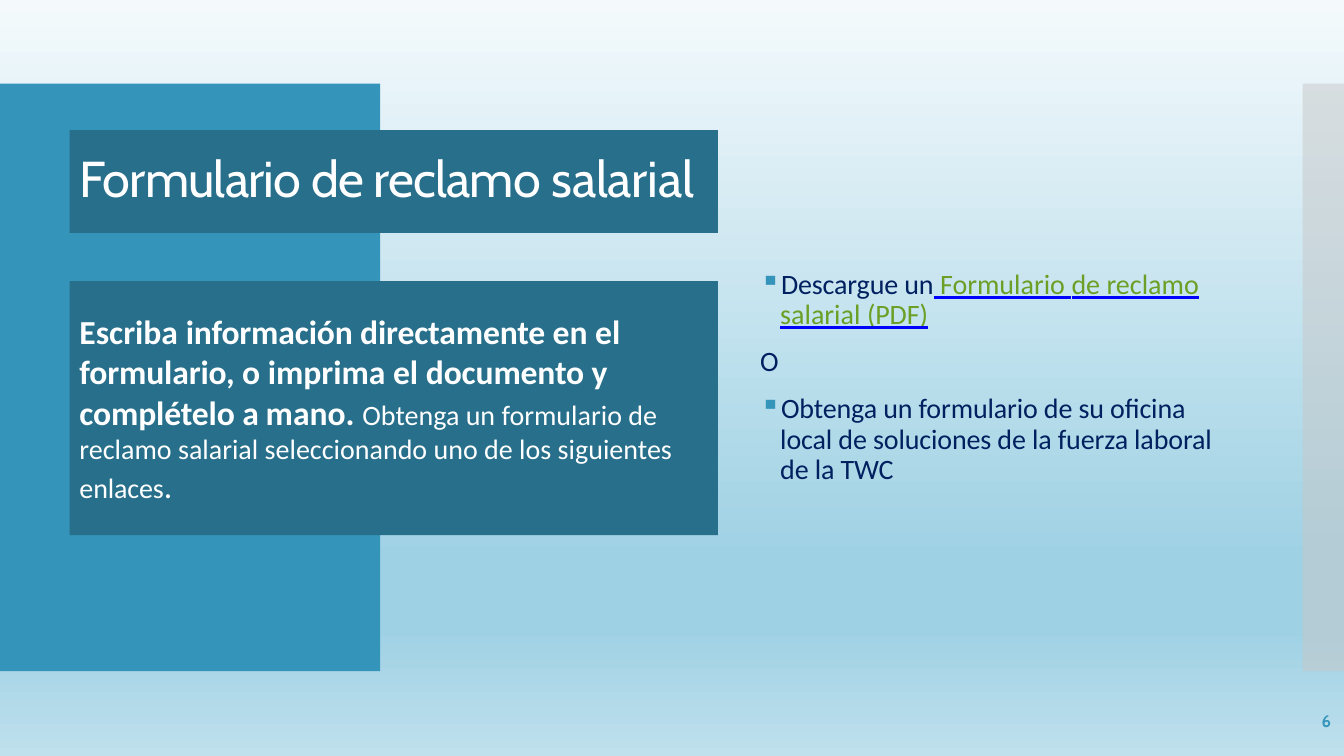
from dataclasses import dataclass

import pptx
import pptx.dml.color
import pptx.enum.shapes
import pptx.enum.text
import pptx.oxml.ns
import pptx.oxml.xmlchemy
import pptx.util
from lxml import etree

Inches = pptx.util.Inches
Pt = pptx.util.Pt
qn = pptx.oxml.ns.qn
Align = pptx.enum.text.PP_ALIGN


@dataclass(frozen=True)
class Theme:
    """Colours, fonts and type sizes of the slide."""
    accent: str = "3494BA"
    panel: str = "276F8B"
    edge: str = "C8C8C8"
    white: str = "FFFFFF"
    navy: str = "002060"
    link: str = "6B9F25"
    underline: str = "0000FF"
    heading_font: str = "Cabin"
    body_font: str = "Calibri"
    title: int = 36
    lead: int = 24
    body: int = 20
    number: int = 12
    backdrop: tuple = ((0, "F4FAFC"), (74, "9FD1E4"), (83, "9FD1E4"), (100, "BFE0ED"))


T = Theme()


@dataclass(frozen=True)
class Span:
    """A stretch of text in one format."""
    text: str
    size: int
    color: str = T.white
    font: str = T.body_font
    spacing: float = 0
    bold: bool = False
    link: bool = False


@dataclass(frozen=True)
class Para:
    """A paragraph made of spans."""
    spans: list[Span]
    line: float = 1.0
    before: float = 0
    bullet: bool = False
    align: Align = Align.LEFT


@dataclass(frozen=True)
class Box:
    """A rectangle or text box with its position in inches."""
    left: float
    top: float
    width: float
    height: float
    fill: str | None = None
    opacity: int = 100
    paras: tuple[Para, ...] = ()


def spans(parts: list[tuple[str, float]], **style) -> list[Span]:
    """Make spans that share a style and differ in letter spacing."""
    return [Span(text, spacing=spacing, **style) for text, spacing in parts]


def rgb(color: str) -> pptx.dml.color.RGBColor:
    """Turn a hex string into a colour."""
    return pptx.dml.color.RGBColor.from_string(color)


def add_color(parent: etree._Element, color: str) -> etree._Element:
    """Append an RGB colour element."""
    return etree.SubElement(parent, qn("a:srgbClr"), val=color)


def paint_background(s: pptx.slide.Slide) -> None:
    """Fill the background with the vertical gradient."""
    fill = s.background.fill
    fill.gradient()
    fill.gradient_angle = 270
    stops = s.element.find(".//" + qn("a:gsLst"))
    stops.clear()
    for position, color in T.backdrop:
        stop = etree.SubElement(stops, qn("a:gs"), pos=str(position * 1000))
        add_color(stop, color)


def add_bullet(p: pptx.text.text._Paragraph) -> None:
    """Give a paragraph a square bullet and a hanging indent."""
    pPr = p._p.get_or_add_pPr()
    pPr.set("marL", str(Inches(0.2)))
    pPr.set("indent", str(-Inches(0.2)))
    add_color(etree.SubElement(pPr, qn("a:buClr")), T.accent)
    etree.SubElement(pPr, qn("a:buChar"), char="▪")


def add_span(p: pptx.text.text._Paragraph, span: Span) -> None:
    """Add one formatted run."""
    r = p.add_run()
    r.text = span.text
    r.font.size = Pt(span.size)
    r.font.bold = span.bold
    r.font.color.rgb = rgb(span.color)
    rPr = r.font._element
    rPr.set("spc", str(round(span.spacing * 100)))
    if span.link:
        r.font.underline = True
        line_fill = etree.SubElement(rPr, qn("a:uFill"))
        add_color(etree.SubElement(line_fill, qn("a:solidFill")), T.underline)
    r.font.name = span.font


def add_box(s: pptx.slide.Slide, box: Box) -> None:
    """Draw a box and its text."""
    place = [Inches(v) for v in (box.left, box.top, box.width, box.height)]
    if box.fill:
        sp = s.shapes.add_shape(pptx.enum.shapes.MSO_SHAPE.RECTANGLE, *place)
        sp.shadow.inherit = False
        sp.fill.solid()
        sp.fill.fore_color.rgb = rgb(box.fill)
        sp.line.fill.background()
        if box.opacity < 100:
            color = sp._element.spPr.find(qn("a:solidFill"))[0]
            etree.SubElement(color, qn("a:alpha"), val=str(box.opacity * 1000))
    else:
        sp = s.shapes.add_textbox(*place)
    tf = sp.text_frame
    tf.word_wrap = True
    tf.vertical_anchor = pptx.enum.text.MSO_ANCHOR.MIDDLE
    for i, para in enumerate(box.paras):
        p = tf.add_paragraph() if i else tf.paragraphs[0]
        p.alignment = para.align
        p.line_spacing = para.line
        p.space_before = Pt(para.before)
        if para.bullet:
            add_bullet(p)
        for span in para.spans:
            add_span(p, span)


TITLE = Para(spans([("Formulario de reclamo ", -0.6), ("salarial", -0.1)],
                   size=T.title, font=T.heading_font), line=0.9)
INSTRUCTIONS = Para(
    spans([("Escriba ", 0), ("información directamente ", -0.1), ("en el ", 0),
           ("formulario, ", -0.1), ("o imprima el ", 0), ("documento ", -0.1), ("y ", 0),
           ("complételo ", -0.1), ("a ", -0.5), ("mano. ", 0)], size=T.lead, bold=True)
    + spans([("Obtenga un formulario de reclamo salarial seleccionando uno de los "
              "siguientes ", 0), ("enlaces", -0.1)], size=T.body)
    + [Span(".", T.lead, spacing=-0.1)])
DOWNLOAD = Para(
    [Span("Descargue un", T.body, T.navy, spacing=-0.1)]
    + spans([(" ", -0.1), ("Formulario", 0), (" ", -0.7), ("de", 0), (" ", -0.3),
             ("reclamo", 0), (" ", -0.4), ("salarial", 0), (" ", -0.2), ("(PDF)", -0.1)],
            size=T.body, color=T.link, link=True), line=0.9, bullet=True)
OR = Para([Span("O", T.body, T.navy, spacing=-0.1)], line=0.9, before=12)
OFFICE = Para([Span("Obtenga un formulario de su oficina local de soluciones de la "
                    "fuerza laboral de la TWC", T.body, T.navy, spacing=-0.1)],
              line=0.9, before=12, bullet=True)
NUMBER = Para([Span("6", T.number, T.accent, T.heading_font, bold=True)], align=Align.RIGHT)

BOXES = [
    Box(0, 0.83, 3.77, 5.83, T.accent),
    Box(12.92, 0.83, 0.41, 5.83, T.edge, 50),
    Box(0.69, 1.29, 6.43, 1.02, T.panel, paras=(TITLE,)),
    Box(0.69, 2.79, 6.43, 2.52, T.panel, paras=(INSTRUCTIONS,)),
    Box(7.44, 0.95, 4.79, 5.6, paras=(DOWNLOAD, OR, OFFICE)),
    Box(11.63, 6.95, 1.67, 0.4, paras=(NUMBER,)),
]


def main() -> None:
    """Build and save the slide."""
    prs = pptx.Presentation()
    prs.slide_width, prs.slide_height = Inches(13.33), Inches(7.5)
    s = prs.slides.add_slide(prs.slide_layouts[6])
    paint_background(s)
    for box in BOXES:
        add_box(s, box)
    prs.save("out.pptx")


if __name__ == "__main__":
    main()
